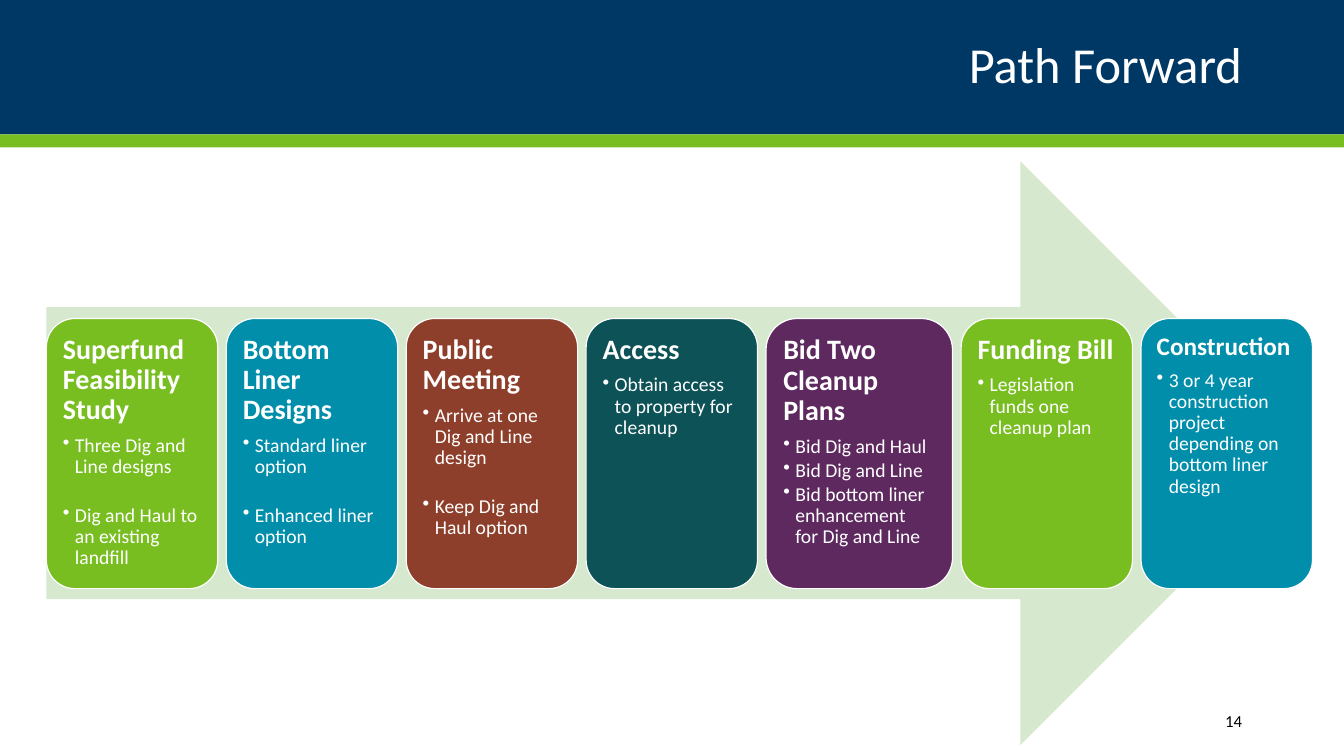
from lxml.etree import SubElement
from pptx import Presentation
from pptx.dml.color import RGBColor
from pptx.enum.shapes import MSO_SHAPE as Shape
from pptx.enum.text import MSO_ANCHOR as Anchor, PP_ALIGN as Align
from pptx.oxml.ns import qn
from pptx.util import Inches, Pt

COLUMNS, ROWS = 40, 30
FLOW_LEFT, FLOW_WIDTH = 1.38, 37.68
CARD_TOP, CARD_HEIGHT = 12.64, 10.72
CARD_WIDTH, WIDE_CARD_WIDTH = 5.1, 5.55
CLOSE, SPREAD = 2.1, 19.5
WHITE, NAVY, GREEN, TEAL = "FFFFFF", "003865", "78BE21", "008EAA"

STEPS = [
    ("Superfund Feasibility Study", GREEN, CARD_WIDTH, 20, SPREAD,
     ["Three Dig and Line designs", "Dig and Haul to an existing landfill"]),
    ("Bottom Liner Designs", TEAL, CARD_WIDTH, 20, SPREAD,
     ["Standard liner option", "Enhanced liner option"]),
    ("Public Meeting", "8D3F2B", CARD_WIDTH, 20, SPREAD,
     ["Arrive at one Dig and Line design", "Keep Dig and Haul option"]),
    ("Access", "0D5257", CARD_WIDTH, 20, CLOSE,
     ["Obtain access to property for cleanup"]),
    ("Bid Two Cleanup Plans", "5D295F", WIDE_CARD_WIDTH, 20, CLOSE,
     ["Bid Dig and Haul", "Bid Dig and Line",
      "Bid bottom liner enhancement\vfor Dig and Line"]),
    ("Funding Bill", GREEN, CARD_WIDTH, 20, CLOSE,
     ["Legislation funds one cleanup plan"]),
    ("Construction", TEAL, CARD_WIDTH, 18, CLOSE,
     ["3 or 4 year construction project depending on bottom liner design"]),
]


def color(value):
    return RGBColor.from_string(value)


class SlideBuilder:
    font_name = "Calibri"

    def __init__(self, presentation):
        self.column = presentation.slide_width / COLUMNS
        self.row = presentation.slide_height / ROWS
        self.slide = presentation.slides.add_slide(presentation.slide_layouts[6])

    def place(self, left, top, width, height):
        return (round(left * self.column), round(top * self.row),
                round(width * self.column), round(height * self.row))

    def block(self, kind, fill, *cells):
        shape = self.slide.shapes.add_shape(kind, *self.place(*cells))
        shape.shadow.inherit = False
        shape.fill.solid()
        shape.fill.fore_color.rgb = color(fill)
        shape.line.fill.background()
        return shape

    def style_text(self, paragraph, text, size, fill=WHITE, bold=False,
                   align=Align.LEFT, spacing=0.9):
        paragraph.text = text
        paragraph.alignment = align
        paragraph.line_spacing = spacing
        for run in paragraph.runs:
            run.font.name = self.font_name
            run.font.size = Pt(size)
            run.font.bold = bold
            run.font.color.rgb = color(fill)

    def label(self, text, size, fill, spacing, *cells):
        box = self.slide.shapes.add_textbox(*self.place(*cells))
        frame = box.text_frame
        frame.word_wrap = True
        frame.vertical_anchor = Anchor.MIDDLE
        self.style_text(frame.paragraphs[0], text, size, fill,
                        align=Align.RIGHT, spacing=spacing)

    def bullet(self, frame, text, space_after):
        paragraph = frame.add_paragraph()
        properties = paragraph._p.get_or_add_pPr()
        properties.set("marL", str(Inches(0.12)))
        properties.set("indent", str(Inches(-0.12)))
        SubElement(properties, qn("a:buChar")).set("char", "•")
        paragraph.level = 1
        self.style_text(paragraph, text, 14)
        paragraph.space_after = Pt(space_after)

    def card(self, heading, fill, heading_size, space_after, points, *cells):
        shape = self.block(Shape.ROUNDED_RECTANGLE, fill, *cells)
        shape.line.color.rgb = color(WHITE)
        shape.line.width = Pt(0.85)
        frame = shape.text_frame
        frame.word_wrap = True
        frame.vertical_anchor = Anchor.TOP
        inset = Pt(heading_size * 0.29)
        frame.margin_left = frame.margin_right = inset
        frame.margin_top = frame.margin_bottom = inset
        self.style_text(frame.paragraphs[0], heading, heading_size, bold=True)
        frame.paragraphs[0].space_after = Pt(heading_size * 0.35)
        for point in points:
            self.bullet(frame, point, space_after)


def main():
    presentation = Presentation()
    presentation.slide_width = Inches(13.33)
    presentation.slide_height = Inches(7.5)
    builder = SlideBuilder(presentation)

    builder.block(Shape.RECTANGLE, NAVY, 0, 0, COLUMNS, 5.33)
    builder.block(Shape.RECTANGLE, GREEN, 0, 5.33, COLUMNS, 0.52)
    builder.label("Path Forward", 36, WHITE, 0.9, 2.76, 0.68, 34.5, 4)
    builder.block(Shape.RIGHT_ARROW, "D6E8CD", FLOW_LEFT, 6.4, FLOW_WIDTH, 23.16)

    gap = (FLOW_WIDTH - sum(step[2] for step in STEPS)) / (len(STEPS) - 1)
    left = FLOW_LEFT
    for heading, fill, width, heading_size, space_after, points in STEPS:
        builder.card(heading, fill, heading_size, space_after, points,
                     left, CARD_TOP, width, CARD_HEIGHT)
        left += width + gap

    builder.label("14", 12, "000000", 1.0, 32.46, 27.8, 4.8, 1.6)
    presentation.save("out.pptx")


if __name__ == "__main__":
    main()
